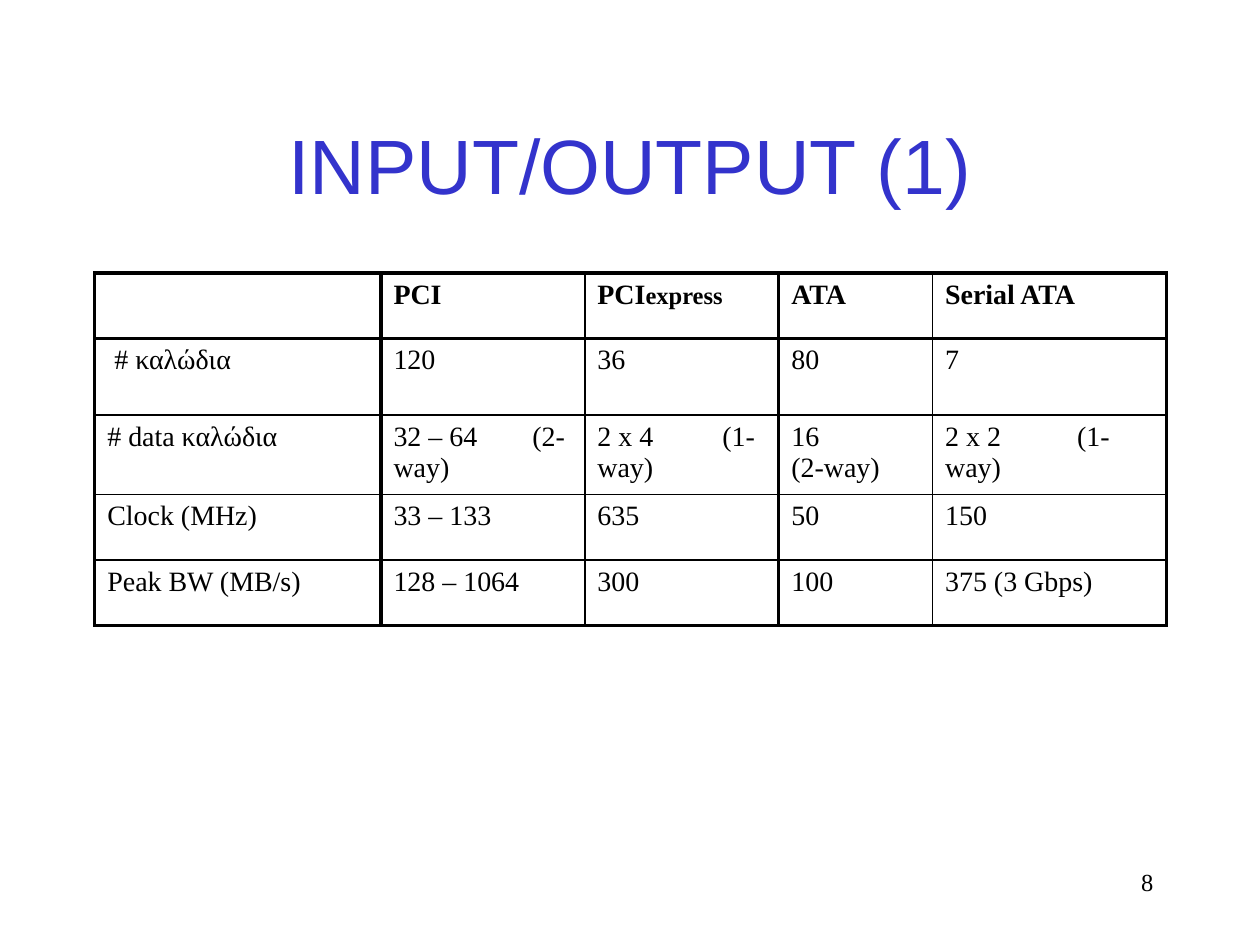
"""Build the INPUT/OUTPUT slide comparing bus standards in a table."""
from dataclasses import dataclass

from lxml.etree import SubElement
from pptx import Presentation
from pptx.dml.color import RGBColor
from pptx.enum.text import MSO_ANCHOR, PP_ALIGN
from pptx.oxml.ns import qn
from pptx.util import Cm, Pt

COLORS = {"title": "3333CC", "text": "000000", "border": "000000"}
SERIF = "Times New Roman"
THICK, THIN = Pt(2.25), Pt(1)


@dataclass(frozen=True)
class Column:
    width: float
    cells: tuple[str, ...]
    tab: float = 0


COLUMNS = (
    Column(5.77, ("", " # καλώδια", "# data καλώδια", "Clock (MHz)", "Peak BW (MB/s)")),
    Column(4.11, ("PCI", "120", "32 – 64\t(2-way)", "33 – 133", "128 – 1064"), tab=2.8),
    Column(3.91, ("PCI", "36", "2 x 4\t(1-way)", "635", "300"), tab=2.52),
    Column(3.1, ("ATA", "80", "16\v(2-way)", "50", "100")),
    Column(4.72, ("Serial ATA", "7", "2 x 2\t(1-way)", "150", "375 (3 Gbps)"), tab=2.66),
)
ROW_HEIGHTS = (1.32, 1.55, 1.6, 1.32, 1.32)
THICK_X = {0, 1, 3, 5}
THICK_Y = {0, 1, 5}


def add_text(p, text: str, *, size: float = 16, font: str = SERIF,
             color: str = "text", bold: bool = False, align=PP_ALIGN.LEFT) -> None:
    p.alignment = align
    for i, line in enumerate(text.split("\v")):
        if i:
            p.add_line_break()
        r = p.add_run()
        r.text = line
        r.font.size = Pt(size)
        r.font.name = font
        r.font.bold = bold
        r.font.color.rgb = RGBColor.from_string(COLORS[color])


def add_tab_stop(p, position: float) -> None:
    tabs = SubElement(p._p.get_or_add_pPr(), qn("a:tabLst"))
    SubElement(tabs, qn("a:tab"), pos=str(Cm(position)), algn="l")


def set_borders(cell, row: int, col: int) -> None:
    tc_pr = cell._tc.get_or_add_tcPr()
    edges = (("L", col in THICK_X), ("R", col + 1 in THICK_X),
             ("T", row in THICK_Y), ("B", row + 1 in THICK_Y))
    for side, thick in edges:
        ln = SubElement(tc_pr, qn(f"a:ln{side}"), w=str(THICK if thick else THIN))
        fill = SubElement(ln, qn("a:solidFill"))
        SubElement(fill, qn("a:srgbClr"), val=COLORS["border"])


def add_bus_table(s) -> None:
    width = sum(column.width for column in COLUMNS)
    table = s.shapes.add_table(len(ROW_HEIGHTS), len(COLUMNS), Cm(1.91), Cm(5.5),
                               Cm(width), Cm(sum(ROW_HEIGHTS))).table
    table.first_row = table.horz_banding = False
    for row, height in zip(table.rows, ROW_HEIGHTS):
        row.height = Cm(height)
    for x, column in enumerate(COLUMNS):
        table.columns[x].width = Cm(column.width)
        for y, text in enumerate(column.cells):
            cell = table.cell(y, x)
            set_borders(cell, y, x)
            cell.fill.background()
            p = cell.text_frame.paragraphs[0]
            if "\t" in text:
                add_tab_stop(p, column.tab)
            if text:
                add_text(p, text, bold=y == 0)
    add_text(table.cell(0, 2).text_frame.paragraphs[0], "express", size=14, bold=True)


def main() -> None:
    prs = Presentation()
    prs.slide_width, prs.slide_height = Cm(25.4), Cm(19.05)
    s = prs.slides.add_slide(prs.slide_layouts[5])

    title = s.shapes.title
    title.left, title.top, title.width, title.height = Cm(1.91), Cm(1.7), Cm(21.59), Cm(3.18)
    title.text_frame.vertical_anchor = MSO_ANCHOR.MIDDLE
    add_text(title.text_frame.paragraphs[0], "INPUT/OUTPUT (1)", size=44,
             font="Arial", color="title", align=PP_ALIGN.CENTER)

    add_bus_table(s)

    number = s.shapes.add_textbox(Cm(18.21), Cm(17.35), Cm(5.29), Cm(1.27))
    number.text_frame.word_wrap = True
    add_text(number.text_frame.paragraphs[0], "8", size=14, align=PP_ALIGN.RIGHT)

    prs.save("out.pptx")


if __name__ == "__main__":
    main()
